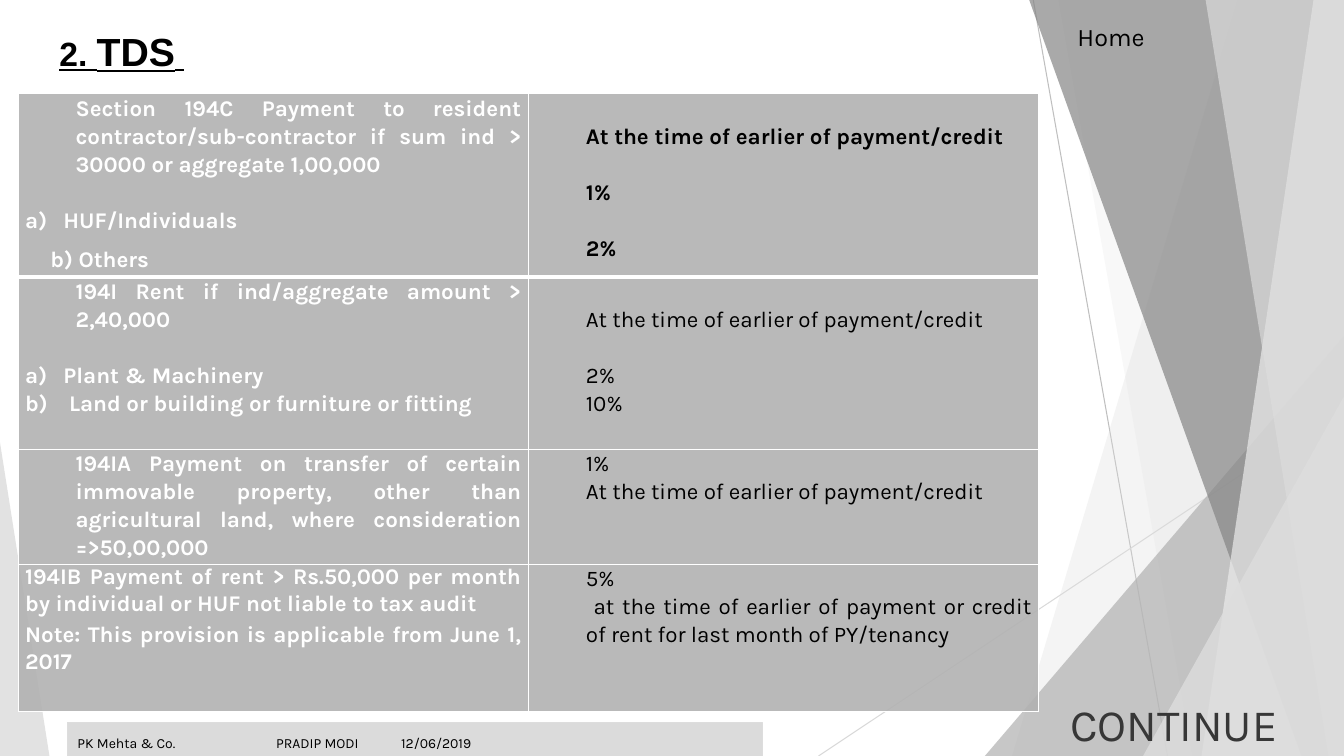
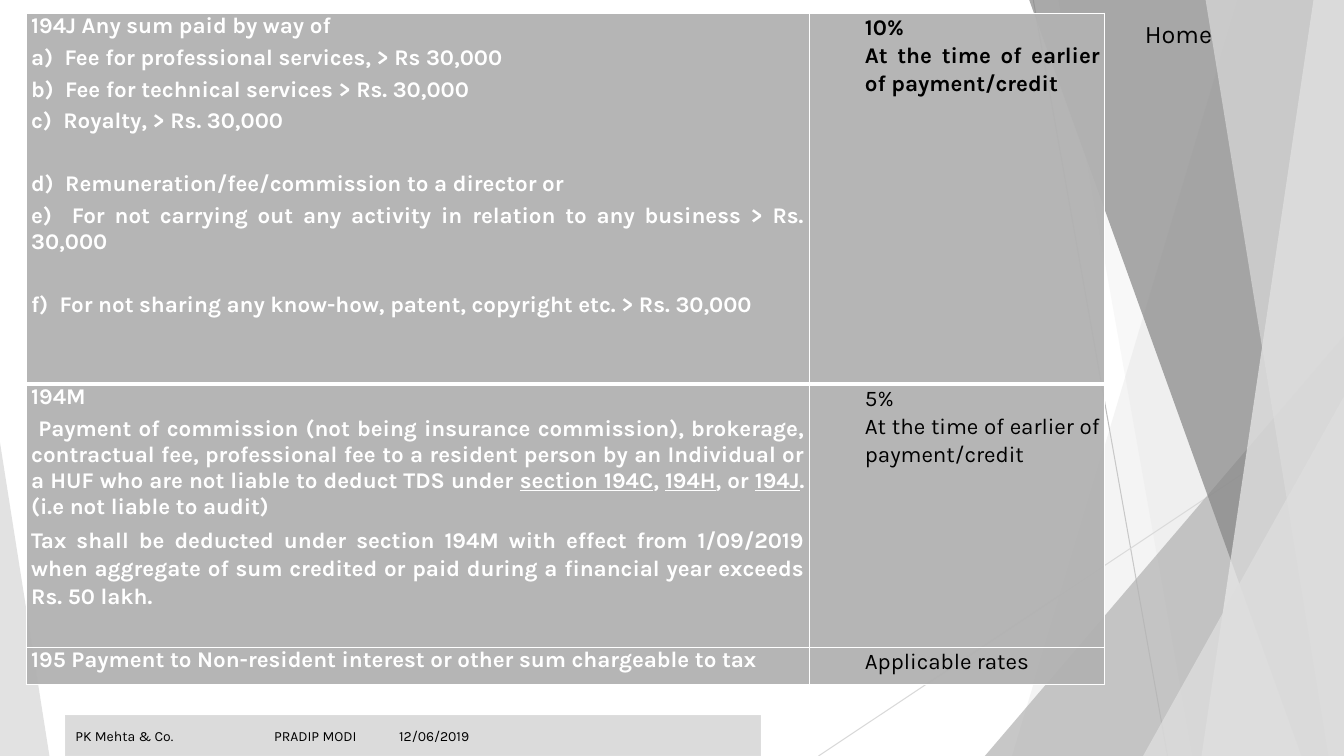
from typing import NamedTuple

from lxml import etree
from pptx import Presentation, util as u
from pptx.dml.color import RGBColor
from pptx.enum import shapes, text
from pptx.oxml.ns import qn

# Palette and fonts
BLACK = RGBColor(0x00, 0x00, 0x00)
WHITE = RGBColor(0xFF, 0xFF, 0xFF)
INK = RGBColor(0x37, 0x37, 0x37)
DARK = RGBColor(0x85, 0x85, 0x85)
MID = RGBColor(0xB2, 0xB2, 0xB2)
RULE = RGBColor(0xBF, 0xBF, 0xBF)
HAIRLINE = RGBColor(0xD9, 0xD9, 0xD9)
LIGHT = RGBColor(0xDD, 0xDD, 0xDD)
PALE = RGBColor(0xEB, 0xEB, 0xEB)
BODY_FONT, TITLE_FONT = "Karla", "Arial"

# Background: facets as (top x, bottom x, colour, opacity),
# triangles as (left, top, width, apex, colour, opacity)
BACK_FACETS = [(92.1, 75.3, LIGHT, 30), (78.75, 88.73, LIGHT, 20)]
FRONT_FACETS = [(76.58, 96.83, DARK, 70), (97.73, 89.4, PALE, 70),
                (89.7, 98.85, LIGHT, 65)]
BACK_TRIANGLE = (73.28, 44.4, 26.72, 1, MID, 72)
FRONT_TRIANGLES = [(85.05, 52.4, 14.95, 1, LIGHT, 80),
                   (0, 58.53, 3.68, 0, LIGHT, 85)]

FOOTER = "PK Mehta & Co.\tPRADIP MODI\t12/06/2019"
FOOTER_TABS = (1.97, 3.21)
LOOSE = 1.07
GAP = 20       # one empty line, in points
WIDE_GAP = 22


class Para(NamedTuple):
    """Justified text; the pieces alternate between plain and underlined."""
    pieces: tuple
    indent: float = 0
    hang: float = 0
    before: float = 0
    after: float = 0
    spacing: float = 1
    numbered: bool = False


def section(words, indent=0.5, **options):
    return Para((words,), indent, spacing=LOOSE, **options)


def numbered(words, **options):
    return section(words, 0.38, hang=-0.38, numbered=True, **options)


def clause(*pieces, **options):
    return Para(pieces, after=4, **options)


class Deck:
    """Holds the style and the current slide; lengths are percent of the slide."""

    def __init__(self):
        self.prs = Presentation()
        self.prs.slide_width, self.prs.slide_height = u.Inches(13.33), u.Inches(7.5)
        self.slide = None

    def x(self, share):
        return round(self.prs.slide_width * share / 100)

    def y(self, share):
        return round(self.prs.slide_height * share / 100)

    def box(self, left, top, width, height):
        return self.x(left), self.y(top), self.x(width), self.y(height)

    # Style helpers
    @staticmethod
    def paint(fill, properties, colour, opacity):
        fill.solid()
        fill.fore_color.rgb = colour
        tint = properties.find(qn("a:solidFill"))[0]
        etree.SubElement(tint, qn("a:alpha"), val=str(opacity * 1000))

    def paint_shape(self, shape, colour, opacity):
        shape.shadow.inherit = False
        self.paint(shape.fill, shape._element.spPr, colour, opacity)
        shape.line.fill.background()

    @staticmethod
    def set_font(font, size, colour, bold=False, name=BODY_FONT):
        font.size, font.name, font.bold = u.Pt(size), name, bold
        font.color.rgb = colour

    # Background
    def line(self, x1, y1, x2, y2, colour):
        rule = self.slide.shapes.add_connector(
            shapes.MSO_CONNECTOR.STRAIGHT, self.x(x1), self.y(y1), self.x(x2), self.y(y2))
        rule.line.color.rgb, rule.line.width = colour, u.Pt(0.75)
        etree.SubElement(rule._element.spPr, qn("a:effectLst"))

    def facet(self, top_x, bottom_x, colour, opacity):
        outline = self.slide.shapes.build_freeform(self.x(top_x), 0)
        outline.add_line_segments([(self.x(100), 0), (self.x(100), self.y(100)),
                                   (self.x(bottom_x), self.y(100))])
        self.paint_shape(outline.convert_to_shape(), colour, opacity)

    def triangle(self, left, top, width, apex, colour, opacity):
        corner = self.slide.shapes.add_shape(
            shapes.MSO_SHAPE.ISOSCELES_TRIANGLE, *self.box(left, top, width, 100 - top))
        corner.adjustments[0] = apex
        self.paint_shape(corner, colour, opacity)

    def new_slide(self):
        self.slide = self.prs.slides.add_slide(self.prs.slide_layouts[6])
        self.line(76.88, 0, 86.87, 100, RULE)
        self.line(100, 53.73, 60.9, 100, HAIRLINE)
        for facet in BACK_FACETS:
            self.facet(*facet)
        self.triangle(*BACK_TRIANGLE)
        for facet in FRONT_FACETS:
            self.facet(*facet)
        for triangle in FRONT_TRIANGLES:
            self.triangle(*triangle)

    # Text
    def textbox(self, left, top, width, height):
        frame = self.slide.shapes.add_textbox(*self.box(left, top, width, height)).text_frame
        frame.word_wrap = True
        return frame.paragraphs[0]

    def label(self, words, left, top, width, height, size, colour):
        paragraph = self.textbox(left, top, width, height)
        paragraph.text = words
        self.set_font(paragraph.font, size, colour)

    def home(self, left, top):
        self.label("Home", left, top, 15.53, 5.33, 18, BLACK)

    def title(self, *sized_words):
        heading = self.textbox(3.68, 2.53, 21.68, 7.6)
        heading.line_spacing = LOOSE
        for words, size in sized_words:
            run = heading.add_run()
            run.text = words
            self.set_font(run.font, size, BLACK, True, TITLE_FONT)
            run.font.underline = True

    def footer(self, left, top):
        band = self.slide.shapes.add_shape(
            shapes.MSO_SHAPE.RECTANGLE, *self.box(left, top, 51.68, 5.33))
        self.paint_shape(band, MID, 46)
        band.line.color.rgb, band.line.width = LIGHT, u.Pt(0.75)
        paragraph = band.text_frame.paragraphs[0]
        paragraph.text = FOOTER
        paragraph.alignment = text.PP_ALIGN.LEFT
        tabs = etree.SubElement(paragraph._p.get_or_add_pPr(), qn("a:tabLst"))
        for stop in FOOTER_TABS:
            etree.SubElement(tabs, qn("a:tab"), pos=str(u.Inches(stop)), algn="l")
        self.set_font(paragraph.font, 10, BLACK)

    # Tables
    @staticmethod
    def border(cell, row):
        top, bottom = {0: (1, 3), 1: (3, 1)}.get(row, (1, 1))
        for side, width in zip("LRTB", (1, 1, top, bottom)):
            edge = etree.SubElement(cell._tc.get_or_add_tcPr(), qn("a:ln" + side),
                                    w=str(u.Pt(width)))
            fill = etree.SubElement(edge, qn("a:solidFill"))
            etree.SubElement(fill, qn("a:srgbClr"), val=str(WHITE))

    def set_para(self, paragraph, para, colour, bold):
        for i, piece in enumerate(para.pieces):
            run = paragraph.add_run()
            run.text = piece
            if i % 2:
                run.font.underline = True
        paragraph.alignment = text.PP_ALIGN.JUSTIFY
        paragraph.line_spacing = para.spacing
        paragraph.space_before, paragraph.space_after = u.Pt(para.before), u.Pt(para.after)
        properties = paragraph._p.get_or_add_pPr()
        properties.set("marL", str(u.Inches(para.indent)))
        properties.set("indent", str(u.Inches(para.hang)))
        if para.numbered:
            etree.SubElement(properties, qn("a:buFont"), typeface=BODY_FONT)
            etree.SubElement(properties, qn("a:buAutoNum"), type="alphaLcParenR")
        self.set_font(paragraph.font, 16, colour, bold)

    def table(self, left, top, widths, heights, rows, inset, opacity):
        frame = self.slide.shapes.add_table(
            len(rows), len(widths), *self.box(left, top, sum(widths), sum(heights)))
        grid = frame.table
        grid.first_row = grid.horz_banding = False
        for column, width in zip(grid.columns, widths):
            column.width = self.x(width)
        for r, (height, contents) in enumerate(zip(heights, rows)):
            grid.rows[r].height = self.y(height)
            for c, paras in enumerate(contents):
                cell = grid.cell(r, c)
                self.border(cell, r)
                self.paint(cell.fill, cell._tc.tcPr, MID, opacity)
                cell.margin_left = cell.margin_right = u.Inches(inset)
                # The first gap of a cell is its top margin
                cell.margin_top, cell.margin_bottom = u.Pt(paras[0].before), 0
                for i, para in enumerate(paras):
                    body = cell.text_frame
                    paragraph = body.add_paragraph() if i else body.paragraphs[0]
                    self.set_para(paragraph, para if i else para._replace(before=0),
                                  BLACK if c else WHITE, c == 0 or r == 0)


TIMING = "At the time of earlier of payment/credit"

CONTRACT_AND_RENT = [
    ([section("Section 194C Payment to resident contractor/sub-contractor if sum ind > "
              "30000 or aggregate 1,00,000"),
      numbered("HUF/Individuals", before=GAP, after=8),
      section("b) Others", 0.25, after=8)],
     [section(TIMING, before=GAP), section("1%", before=GAP),
      section("2%", before=GAP, after=8)]),
    ([section("194I Rent if ind/aggregate amount > 2,40,000"),
      numbered("Plant & Machinery", before=GAP),
      numbered(" Land or building or furniture or fitting")],
     [section(TIMING, before=GAP), section("2%", before=GAP), section("10%", after=8)]),
    ([section("194IA Payment on transfer of certain immovable property, other than "
              "agricultural land, where consideration =>50,00,000")],
     [section("1%"), section(TIMING, after=8)]),
    ([clause("194IB Payment of rent > Rs.50,000 per month by individual or HUF not "
             "liable to tax audit"),
      clause("Note: This provision is applicable from June 1, 2017")],
     [section("5%"),
      section(" at the time of earlier of payment or credit of rent for last month of "
              "PY/tenancy", after=8)]),
]

FEES_AND_OTHERS = [
    ([clause("194J Any sum paid by way of"),
      clause("a)\u00a0 Fee for professional services, > Rs 30,000".replace("\u00a0", " ")),
      clause("b)  Fee for technical services > Rs. 30,000"),
      clause("c)  Royalty, > Rs. 30,000"),
      clause("d)  Remuneration/fee/commission to a director or", before=WIDE_GAP),
      clause("e)  For not carrying out any activity in relation to any business > "
             "Rs. 30,000"),
      clause("f)  For not sharing any know-how, patent, copyright etc. > Rs. 30,000",
             before=WIDE_GAP)],
     [section("10%"), section(TIMING, after=8)]),
    ([clause("194M"),
      clause(" Payment of commission (not being insurance commission), brokerage, "
             "contractual fee, professional fee to a resident person by an Individual or "
             "a HUF who are not liable to deduct TDS under ", "section 194C", ", ",
             "194H", ", or ", "194J", ".(i.e not liable to audit)"),
      section("Tax shall be deducted under section 194M with effect from 1/09/2019 when "
              "aggregate of sum credited or paid during a financial year exceeds "
              "Rs. 50 lakh.", 0, after=8)],
     [section("5%"), section(TIMING, after=8)]),
    ([clause("195 Payment to Non-resident interest or other sum chargeable to tax")],
     [section("Applicable rates", after=8)]),
]


def main():
    deck = Deck()

    # Slide 1: contractors, rent and property
    deck.new_slide()
    deck.title(("2. ", 24), ("TDS", 28), (" ", 24))
    deck.table(1.35, 12.4, (37.97, 37.97), (24.27, 22.8, 15.2, 19.47),
               CONTRACT_AND_RENT, 0.07, 90)
    deck.label("CONTINUE", 78.9, 91.47, 21.1, 8.53, 32, INK)
    deck.footer(5.03, 95.6)
    deck.home(79.43, 2.13)

    # Slide 2: fees, commission and non-residents
    deck.new_slide()
    deck.table(1.95, 1.73, (58.28, 21.98), (49.07, 34.8, 4.93),
               FEES_AND_OTHERS, 0.05, 96)
    deck.footer(4.88, 94.67)
    deck.home(84.45, 1.73)

    deck.prs.save("out.pptx")


if __name__ == "__main__":
    main()
